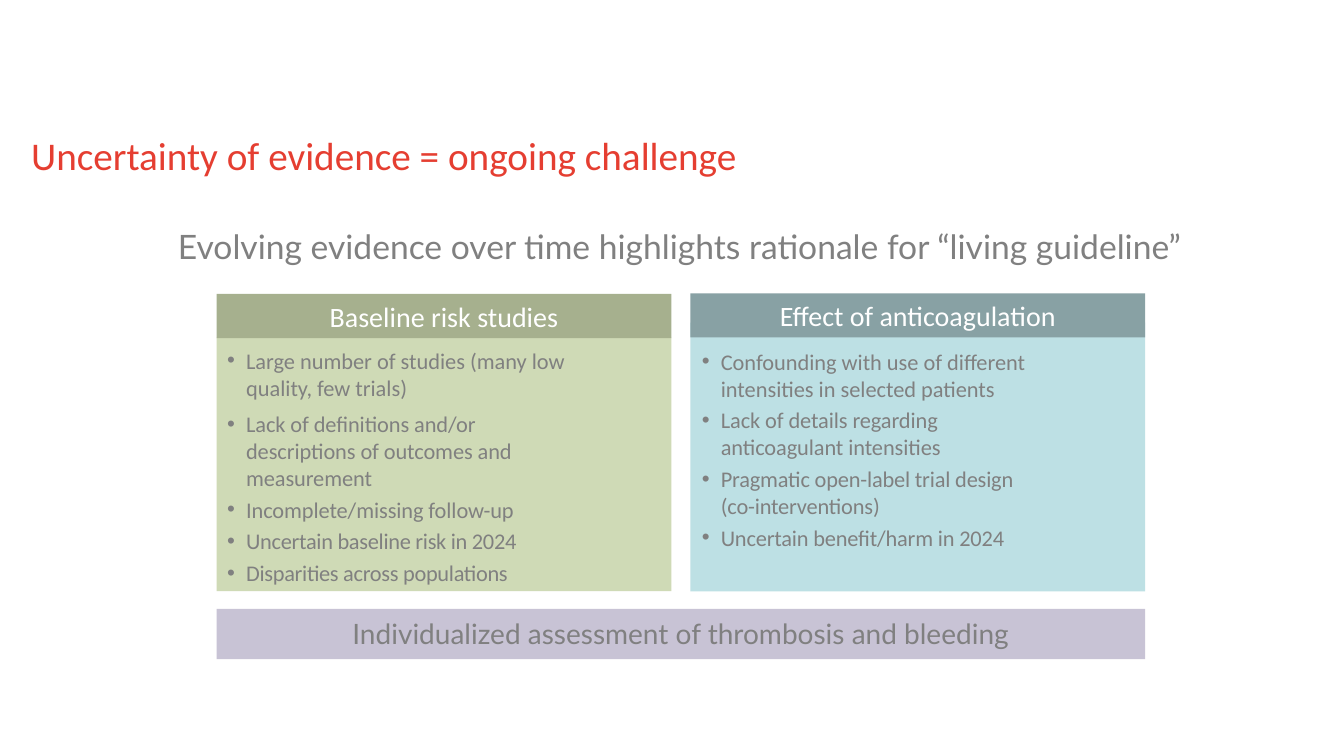
from dataclasses import dataclass

from lxml import etree
from pptx import Presentation
from pptx import util as u
from pptx.dml.color import RGBColor
from pptx.enum import shapes, text
from pptx.oxml import ns

COLORS = {
    "title": "E53E31",
    "body": "808080",
    "white": "FFFFFF",
    "risk_header": "A6B08E",
    "risk_panel": "CAD7AF",
    "effect_header": "88A1A4",
    "effect_panel": "BDE0E4",
    "summary": "C8C3D5",
}


@dataclass(frozen=True)
class Box:
    left: float
    top: float
    width: float
    height: float

    def lengths(self) -> list:
        return [u.Pt(v) for v in (self.left, self.top, self.width, self.height)]


@dataclass(frozen=True)
class Bullet:
    words: str
    before: float = 3.5
    tracking: int = 0  # hundredths of a point


@dataclass(frozen=True)
class Column:
    heading: str
    header: Box
    panel: Box
    body: Box
    header_color: str
    panel_color: str
    opacity: int
    bullets: tuple


COLUMNS = (
    Column(
        "Effect of anticoagulation",
        Box(493.2, 209.5, 324.7, 31.5),
        Box(493.2, 230.4, 324.7, 192),
        Box(493.9, 241.9, 324, 154.8),
        "effect_header", "effect_panel", 100,
        (
            Bullet("Confounding with use of different intensities in selected patients", 0),
            Bullet("Lack of details regarding anticoagulant intensities", tracking=-5),
            Bullet("Pragmatic open-label trial design (co-interventions)", tracking=-10),
            Bullet("Uncertain benefit/harm in 2024", tracking=-10),
        ),
    ),
    Column(
        "Baseline risk studies",
        Box(154.8, 210, 324.7, 31.5),
        Box(154.8, 241.2, 324.7, 181),
        Box(154.8, 241.2, 324.7, 181),
        "risk_header", "risk_panel", 90,
        (
            Bullet("Large number of studies (many low quality, few trials)", 0),
            Bullet("Lack of definitions and/or descriptions of outcomes and measurement", 6.7, -5),
            Bullet("Incomplete/missing follow-up", 3.6, -5),
            Bullet("Uncertain baseline risk in 2024", tracking=-20),
            Bullet("Disparities across populations", tracking=-20),
        ),
    ),
)

deck = Presentation()
deck.slide_width, deck.slide_height = u.Pt(960), u.Pt(540)
slide = deck.slides.add_slide(deck.slide_layouts[6])


def add_panel(box: Box, color: str, opacity: int = 100):
    panel = slide.shapes.add_shape(shapes.MSO_SHAPE.RECTANGLE, *box.lengths())
    panel.shadow.inherit = False
    panel.fill.solid()
    panel.fill.fore_color.rgb = RGBColor.from_string(COLORS[color])
    panel.line.fill.background()
    if opacity < 100:
        tint = panel.fill._xPr.find(".//" + ns.qn("a:srgbClr"))
        etree.SubElement(tint, ns.qn("a:alpha"), val=str(opacity * 1000))
    return panel


def set_insets(frame, left: float, top: float, right: float, bottom: float) -> None:
    frame.margin_left, frame.margin_top = u.Pt(left), u.Pt(top)
    frame.margin_right, frame.margin_bottom = u.Pt(right), u.Pt(bottom)


def write(paragraph, words: str, *, size: float, color: str, font: str = "Calibri",
          align=text.PP_ALIGN.LEFT, tracking: int = 0) -> None:
    paragraph.alignment = align
    run = paragraph.add_run()
    run.text = words
    run.font.name, run.font.size = font, u.Pt(size)
    run.font.color.rgb = RGBColor.from_string(COLORS[color])
    if tracking:
        run._r.get_or_add_rPr().set("spc", str(tracking))


def add_text(box: Box, words: str, insets: tuple = (7.2, 3.6, 7.2, 3.6), **style) -> None:
    frame = slide.shapes.add_textbox(*box.lengths()).text_frame
    frame.word_wrap = True
    set_insets(frame, *insets)
    write(frame.paragraphs[0], words, **style)


def add_bullets(box: Box, bullets: tuple) -> None:
    frame = slide.shapes.add_textbox(*box.lengths()).text_frame
    frame.word_wrap = True
    set_insets(frame, 0, 6.6, 0, 0)
    for number, bullet in enumerate(bullets):
        paragraph = frame.add_paragraph() if number else frame.paragraphs[0]
        layout = paragraph._p.get_or_add_pPr()
        for key, points in (("marL", 21), ("marR", 70), ("indent", -13.5)):
            layout.set(key, str(int(u.Pt(points))))
        etree.SubElement(layout, ns.qn("a:buFont"), typeface="Arial")
        etree.SubElement(layout, ns.qn("a:buChar"), char="•")
        paragraph.space_before = u.Pt(bullet.before)
        write(paragraph, bullet.words, size=16, color="body", tracking=bullet.tracking)


# Title and subtitle
add_text(Box(22.3, 92.9, 915, 49.7), "Uncertainty of evidence = ongoing challenge",
         insets=(0, 1, 0, 0), size=28, color="title")
add_text(Box(32.4, 157.7, 905.8, 36),
         "Evolving evidence over time highlights rationale for “living guideline”",
         size=24, color="body", font="Lato", align=text.PP_ALIGN.CENTER)

# Two evidence columns
for column in COLUMNS:
    add_panel(column.panel, column.panel_color, column.opacity)
    add_bullets(column.body, column.bullets)
    heading = add_panel(column.header, column.header_color).text_frame
    heading.vertical_anchor = text.MSO_ANCHOR.MIDDLE
    write(heading.paragraphs[0], column.heading, size=20, color="white",
          align=text.PP_ALIGN.CENTER)

# Summary bar
add_panel(Box(154.8, 434.9, 663.1, 36), "summary")
add_text(Box(154.8, 437, 663.1, 31.7), "Individualized assessment of thrombosis and bleeding",
         size=20, color="body", font="Lato", align=text.PP_ALIGN.CENTER)

deck.save("out.pptx")
